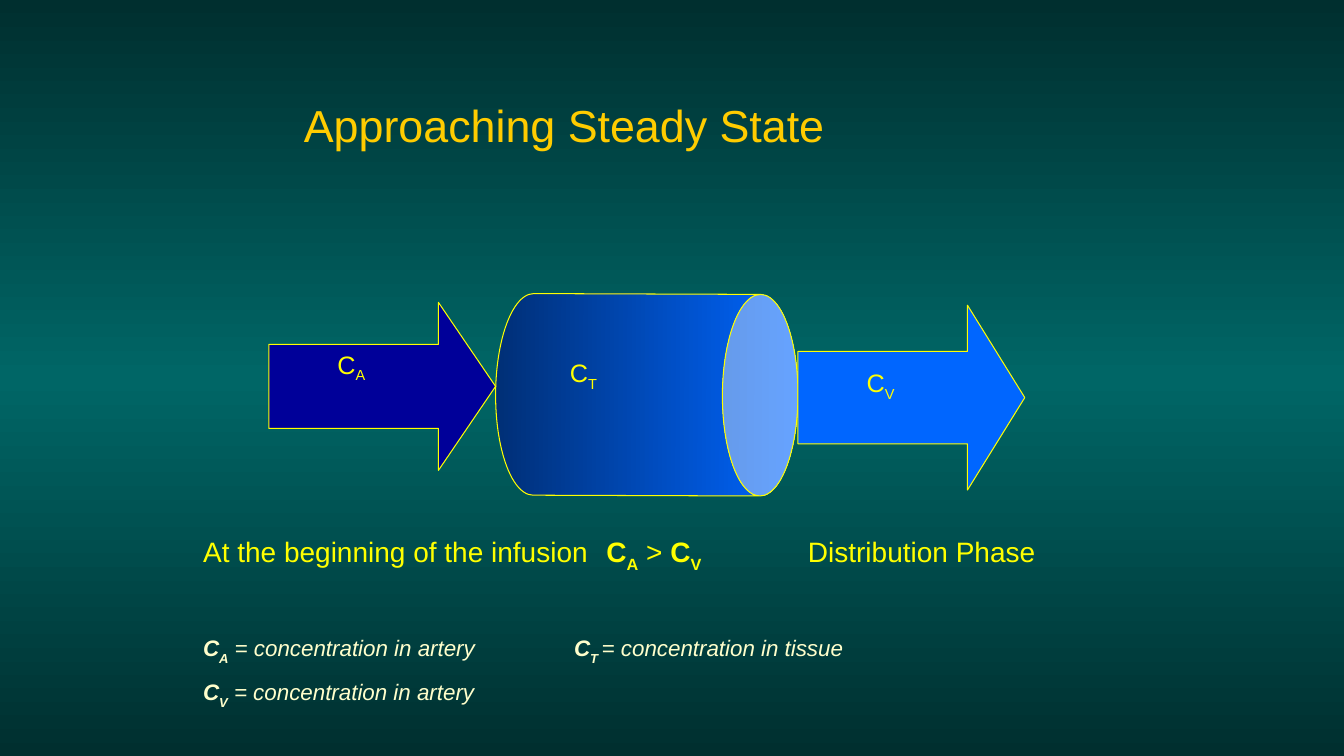
from copy import deepcopy
from dataclasses import dataclass

from lxml import etree
from pptx import Presentation
from pptx import util as u
from pptx.dml import color, fill as fills
from pptx.enum import shapes, text
from pptx.oxml import ns

YELLOW = color.RGBColor(0xFF, 0xFF, 0x00)
GOLD = color.RGBColor(0xFF, 0xCC, 0x00)
CREAM = color.RGBColor(0xFF, 0xFF, 0xCC)
NAVY = color.RGBColor(0x00, 0x00, 0x99)
BLUE = color.RGBColor(0x00, 0x66, 0xFF)
DARK_BLUE = color.RGBColor(0x00, 0x2F, 0x76)
TEAL = color.RGBColor(0x00, 0x66, 0x66)
DARK_TEAL = color.RGBColor(0x00, 0x2F, 0x2F)


@dataclass(frozen=True)
class Piece:
    words: str
    bold: bool = False
    lowered: int = 0


@dataclass(frozen=True)
class Line:
    pieces: list[Piece]
    size: float
    ink: color.RGBColor
    italic: bool = False
    space_before: float = 0
    tabs: tuple[float, ...] = ()


@dataclass(frozen=True)
class Body:
    kind: shapes.MSO_SHAPE
    box: tuple[float, float, float, float]
    adjustments: tuple[float, ...]
    fill: color.RGBColor | None = None
    rotation: float = 0


@dataclass(frozen=True)
class Caption:
    box: tuple[float, float, float, float]
    lines: list[Line]


def symbol(index: str, bold: bool = True, lowered: int = -30) -> list[Piece]:
    return [Piece("C", bold), Piece(index, bold, lowered)]


def label(left: float, top: float, index: str) -> Caption:
    return Caption((left, top, 72, 29), [Line(symbol(index, False, -25), 18, YELLOW)])


def set_gradient(fill: fills.FillFormat, owner, angle: float,
                 stops: list[tuple[float, color.RGBColor]]) -> None:
    fill.gradient()
    fill.gradient_angle = angle
    stop_list = owner.xpath(".//a:gsLst")[0]
    while len(stop_list) < len(stops):
        stop_list.append(deepcopy(stop_list[0]))
    for stop, (position, rgb) in zip(fill.gradient_stops, stops):
        stop.position = position
        stop.color.rgb = rgb


def draw_body(slide, body: Body) -> None:
    shape = slide.shapes.add_shape(body.kind, *map(u.Pt, body.box))
    shape.shadow.inherit = False
    shape.rotation = body.rotation
    for index, value in enumerate(body.adjustments):
        shape.adjustments[index] = value
    if body.fill is None:
        set_gradient(shape.fill, shape.element, 90, [(0, DARK_BLUE), (1, BLUE)])
    else:
        shape.fill.solid()
        shape.fill.fore_color.rgb = body.fill
    shape.line.color.rgb = YELLOW
    shape.line.width = u.Pt(0.75)


def set_tabs(paragraph, positions: tuple[float, ...]) -> None:
    properties = paragraph._p.get_or_add_pPr()
    tab_list = etree.SubElement(properties, ns.qn("a:tabLst"))
    for position in positions:
        etree.SubElement(tab_list, ns.qn("a:tab"), pos=str(u.Pt(position)), algn="l")


def draw_caption(slide, caption: Caption) -> None:
    frame = slide.shapes.add_textbox(*map(u.Pt, caption.box)).text_frame
    frame.word_wrap = True
    frame.auto_size = text.MSO_AUTO_SIZE.SHAPE_TO_FIT_TEXT
    for index, line in enumerate(caption.lines):
        paragraph = frame.add_paragraph() if index else frame.paragraphs[0]
        paragraph.space_before = u.Pt(line.space_before)
        if line.tabs:
            set_tabs(paragraph, line.tabs)
        for piece in line.pieces:
            run = paragraph.add_run()
            run.text = piece.words
            run.font.name = "Arial"
            run.font.size = u.Pt(line.size)
            run.font.color.rgb = line.ink
            run.font.bold = piece.bold
            run.font.italic = line.italic
            if piece.lowered:
                run._r.get_or_add_rPr().set("baseline", str(piece.lowered * 1000))


# Artery, tissue and vein
BODIES = [
    Body(shapes.MSO_SHAPE.CAN, (390, 174, 144, 216), (0.375,), rotation=90.2),
    Body(shapes.MSO_SHAPE.RIGHT_ARROW, (192, 216, 162, 120), (0.5, 0.34), NAVY),
    Body(shapes.MSO_SHAPE.RIGHT_ARROW, (570, 218, 162, 132), (0.5, 0.31), BLUE),
]

# Title, labels, statement and legend
CAPTIONS = [
    label(234, 246, "A"),
    label(612, 259, "V"),
    label(400, 252, "T"),
    Caption((210, 66, 576, 46), [Line([Piece("Approaching Steady State")], 32, GOLD)]),
    Caption((138, 378, 678, 126), [
        Line([Piece("At the beginning of the infusion\t"), *symbol("A"), Piece(" > "),
              *symbol("V"), Piece("\tDistribution Phase")],
             20, YELLOW, tabs=(288, 432)),
        Line([*symbol("A"), Piece(" = concentration in artery\t"),
              *symbol("T "), Piece("= concentration in tissue")],
             16, CREAM, italic=True, space_before=43, tabs=(265,)),
        Line([*symbol("V"), Piece(" = concentration in artery")],
             16, CREAM, italic=True, space_before=9),
    ]),
]


def main() -> None:
    presentation = Presentation()
    presentation.slide_width = u.Pt(960)
    presentation.slide_height = u.Pt(540)
    slide = presentation.slides.add_slide(presentation.slide_layouts[6])
    set_gradient(slide.background.fill, slide.element, 90,
                 [(0, DARK_TEAL), (0.5, TEAL), (1, DARK_TEAL)])
    for body in BODIES:
        draw_body(slide, body)
    for caption in CAPTIONS:
        draw_caption(slide, caption)
    presentation.save("out.pptx")


if __name__ == "__main__":
    main()
